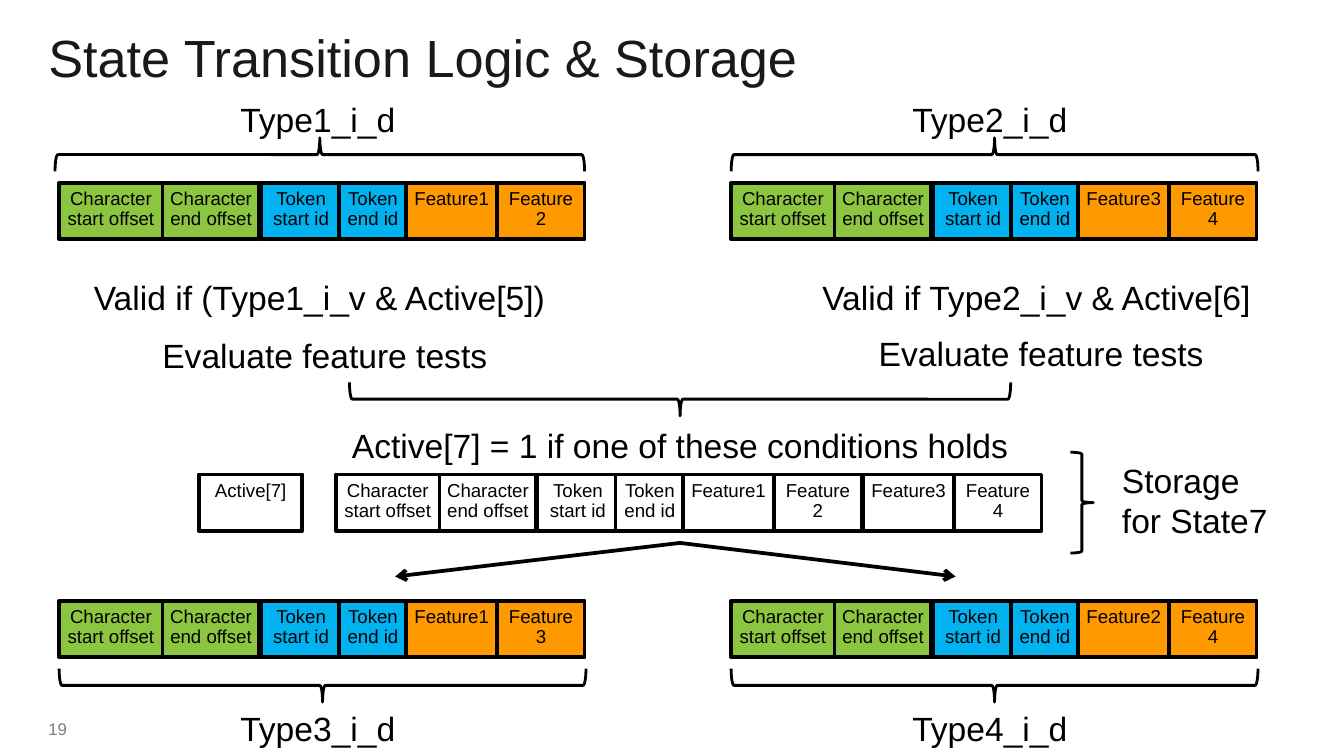
from lxml.etree import SubElement
from pptx import Presentation
from pptx.dml.color import RGBColor
from pptx.enum.shapes import MSO_CONNECTOR, MSO_SHAPE
from pptx.enum.text import MSO_ANCHOR, PP_ALIGN
from pptx.oxml.ns import qn
from pptx.util import Inches, Pt

BLACK = RGBColor(0x00, 0x00, 0x00)
WHITE = RGBColor(0xFF, 0xFF, 0xFF)
TITLE_COLOR = RGBColor(0x19, 0x19, 0x19)
GRAY = RGBColor(0x7F, 0x7F, 0x7F)
GREEN = RGBColor(0x8C, 0xC6, 0x40)
BLUE = RGBColor(0x00, 0xB2, 0xEF)
ORANGE = RGBColor(0xFF, 0x99, 0x00)
FONT = "Arial"

# Content
TITLE = "State Transition Logic & Storage"
PAGE_NUMBER = "19"
# Fields every record starts with: text, fill
COMMON_FIELDS = [
    ("Character start offset", GREEN),
    ("Character end offset", GREEN),
    ("Token start id", BLUE),
    ("Token end id", BLUE),
]
# Offset and width of each field column inside a record
COLUMNS = [(0, 0.77), (0.77, 0.72), (1.5, 0.6), (2.08, 0.51),
           (2.58, 0.68), (3.26, 0.65), (3.92, 0.68), (4.6, 0.65)]
LEFT, RIGHT = 0.44, 5.44
INPUT_TOP, STATE_TOP, OUTPUT_TOP = 1.36, 3.53, 4.47
CELL_HEIGHT = 0.42
# Left, top, features, fixed fill (None keeps the field colours)
RECORDS = [
    (LEFT, INPUT_TOP, ["Feature1", "Feature2"], None),
    (RIGHT, INPUT_TOP, ["Feature3", "Feature4"], None),
    (2.5, STATE_TOP, ["Feature1", "Feature2", "Feature3", "Feature4"], WHITE),
    (LEFT, OUTPUT_TOP, ["Feature1", "Feature3"], None),
    (RIGHT, OUTPUT_TOP, ["Feature2", "Feature4"], None),
]
# Left, top, width, height, lines
LABELS = [
    (LEFT + 1.25, 0.69, 1.44, 0.4, ["Type1_i_d"]),
    (RIGHT + 1.25, 0.69, 1.44, 0.4, ["Type2_i_d"]),
    (0.6, 2.01, 3.67, 0.4, ["Valid if (Type1_i_v & Active[5])"]),
    (6.02, 2.01, 3.5, 0.4, ["Valid if Type2_i_v & Active[6]"]),
    (1.11, 2.44, 2.67, 0.4, ["Evaluate feature tests"]),
    (6.44, 2.43, 2.67, 0.4, ["Evaluate feature tests"]),
    (2.52, 3.11, 5.12, 0.4, ["Active[7] = 1 if one of these conditions holds"]),
    (LEFT + 1.25, 5.22, 1.44, 0.4, ["Type3_i_d"]),
    (RIGHT + 1.25, 5.22, 1.44, 0.4, ["Type4_i_d"]),
    (8.25, 3.37, 1.33, 0.71, ["Storage", "for State7"]),
]
# Centre x, centre y, span, depth, rotation
BRACES = [
    (2.38, 1.15, 3.94, 0.25, 270),
    (7.4, 1.15, 3.92, 0.25, 270),
    (5.06, 2.97, 4.92, 0.25, 90),
    (2.4, 5.1, 3.92, 0.25, 90),
    (7.4, 5.1, 3.92, 0.25, 90),
    (8.05, 3.74, 0.75, 0.17, 0),
]
ARROW_START = (5.06, 4.04)
ARROW_ENDS = [(2.94, 4.29), (7.11, 4.29)]


def write_text(shape, lines, size=18, color=BLACK, align=PP_ALIGN.LEFT,
               inset=None, spacing=None):
    frame = shape.text_frame
    frame.word_wrap = True
    frame.vertical_anchor = MSO_ANCHOR.TOP
    if inset is not None:
        frame.margin_left = frame.margin_right = Inches(inset)
        frame.margin_top = frame.margin_bottom = Inches(inset)
    frame.text = "\n".join(lines)
    for paragraph in frame.paragraphs:
        paragraph.alignment = align
        if spacing:
            paragraph.line_spacing = spacing
        paragraph.font.name = FONT
        paragraph.font.size = Pt(size)
        paragraph.font.color.rgb = color


def add_cell(shapes, left, top, width, text, fill):
    cell = shapes.add_shape(MSO_SHAPE.RECTANGLE, Inches(left), Inches(top),
                            Inches(width), Inches(CELL_HEIGHT))
    cell.shadow.inherit = False
    cell.fill.solid()
    cell.fill.fore_color.rgb = fill
    cell.line.color.rgb = BLACK
    cell.line.width = Pt(2)
    write_text(cell, [text], size=10, align=PP_ALIGN.CENTER, inset=0.05, spacing=0.9)


def add_record(slide, left, top, features, fill):
    group = slide.shapes.add_group_shape()
    fields = COMMON_FIELDS + [(feature, ORANGE) for feature in features]
    for (offset, width), (text, color) in zip(COLUMNS, fields):
        add_cell(group.shapes, left + offset, top, width, text, fill or color)


def add_brace(slide, center_x, center_y, span, depth, rotation):
    brace = slide.shapes.add_shape(
        MSO_SHAPE.RIGHT_BRACE, Inches(center_x - depth / 2),
        Inches(center_y - span / 2), Inches(depth), Inches(span))
    brace.rotation = rotation
    brace.shadow.inherit = False
    brace.fill.background()
    brace.line.color.rgb = BLACK
    brace.line.width = Pt(1.5)


def add_arrow(slide, start, end):
    arrow = slide.shapes.add_connector(
        MSO_CONNECTOR.STRAIGHT, *(Inches(value) for value in start + end))
    arrow.line.color.rgb = BLACK
    arrow.line.width = Pt(2)
    properties = arrow._element.spPr
    SubElement(properties.find(qn("a:ln")), qn("a:tailEnd"), type="arrow")
    SubElement(properties, qn("a:effectLst"))


def add_label(slide, left, top, width, height, lines, **text_format):
    box = slide.shapes.add_textbox(Inches(left), Inches(top),
                                   Inches(width), Inches(height))
    write_text(box, lines, **text_format)


def main():
    # Widescreen page, 16:9
    presentation = Presentation()
    presentation.slide_width = Inches(10)
    presentation.slide_height = Inches(10 * 9 / 16)
    slide = presentation.slides.add_slide(presentation.slide_layouts[5])

    # Title and page number
    title = slide.shapes.title
    title.left, title.top = Inches(0.36), Inches(0.24)
    title.width, title.height = Inches(9.5), Inches(0.43)
    write_text(title, [TITLE], size=28, color=TITLE_COLOR, inset=0, spacing=0.9)
    add_label(slide, 0.36, 5.35, 2.32, 0.19, [PAGE_NUMBER],
              size=9, color=GRAY, inset=0)

    # Records and the active flag
    for record in RECORDS:
        add_record(slide, *record)
    add_cell(slide.shapes, 1.48, STATE_TOP, 0.77, "Active[7]", WHITE)

    # Braces, labels and arrows
    for brace in BRACES:
        add_brace(slide, *brace)
    for label in LABELS:
        add_label(slide, *label)
    for end in ARROW_ENDS:
        add_arrow(slide, ARROW_START, end)

    presentation.save("out.pptx")


if __name__ == "__main__":
    main()
